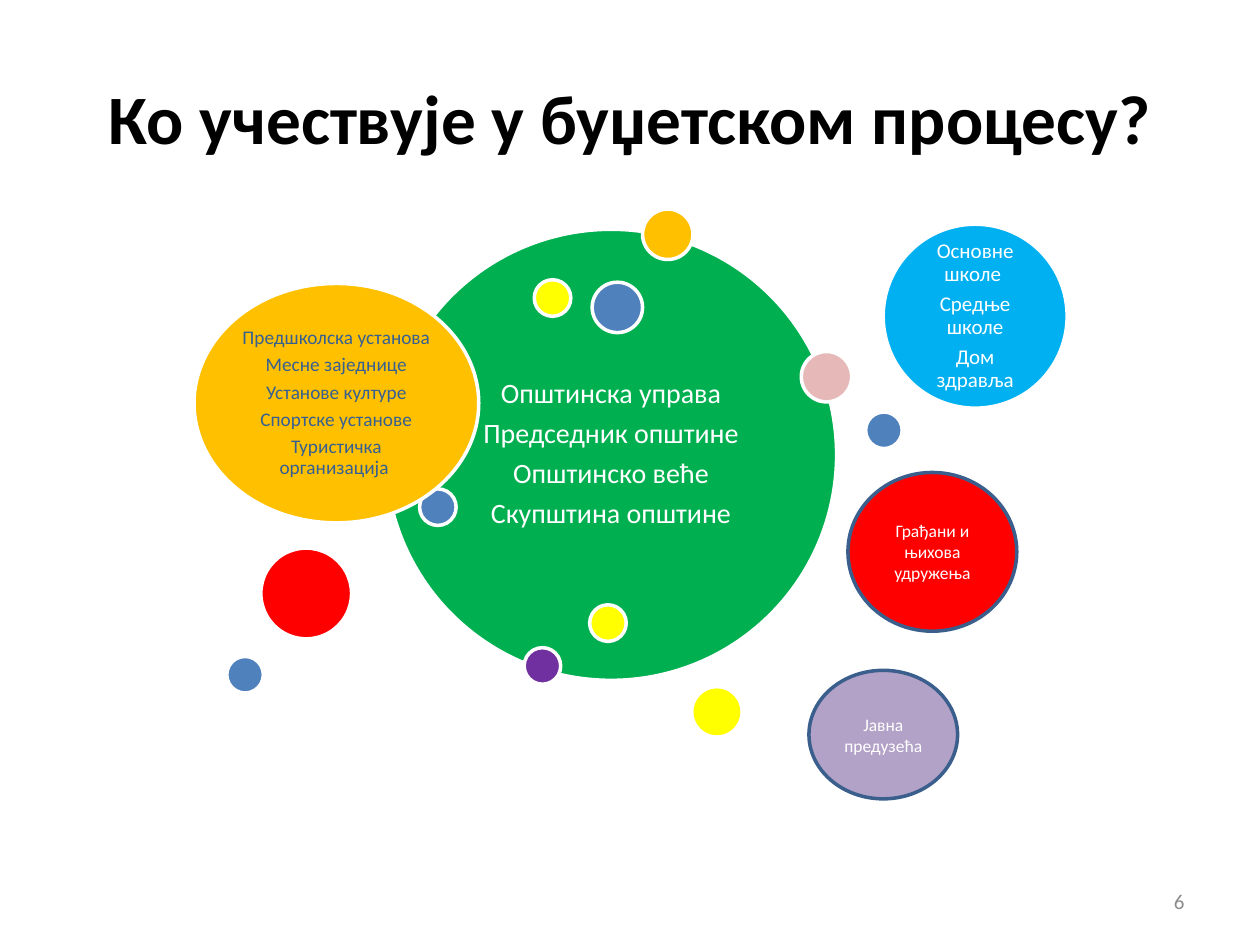
from pptx import Presentation
from pptx.dml.color import RGBColor
from pptx.enum.shapes import MSO_SHAPE
from pptx.enum.text import MSO_ANCHOR, PP_ALIGN
from pptx.util import Inches, Pt

OVAL = MSO_SHAPE.OVAL
MIDDLE = MSO_ANCHOR.MIDDLE
CENTER, RIGHT = PP_ALIGN.CENTER, PP_ALIGN.RIGHT
FONT = "Calibri"
WHITE, NAVY, BLUE = "FFFFFF", "3A5F8C", "4F81BD"
GREEN, GOLD, YELLOW, RED = "00B050", "FFC000", "FFFF00", "FF0000"
SMALL, MID, LARGE = 0.29, 0.4, 0.72

TITLE = "Ко учествује у буџетском процесу?"
NUMBER = "6"

# Groups of participants: box, fill, text size, text colour, inset, lines
CORE = ((3.06, 1.82, 3.58, 3.58), GREEN, 16, WHITE, 0.07,
        ["Општинска управа", "Председник општине",
         "Општинско веће", "Скупштина општине"])
LOCAL = ((1.54, 2.25, 2.26, 1.9), GOLD, 11, "376092", 0.05,
         ["Предшколска установа", "Месне заједнице", "Установе културе",
          "Спортске установе", "Туристичка организација "])
PUBLIC = ((7.01, 1.78, 1.46, 1.46), "00B0F0", 12, WHITE, 0.05,
          ["Основне школе ", "Средње школе", "Дом здравља"])

# Outlined ovals: box, fill, text
OUTER = [
    ((6.73, 3.75, 1.34, 1.26), RED, "Грађани и њихова удружења"),
    ((6.42, 5.32, 1.18, 1.02), "B3A2C7", "Јавна предузећа"),
]

# Plain dots: left, top, size, fill
BACK = [
    (5.1, 1.66, MID, GOLD),
    (4.16, 5.14, SMALL, "7030A0"),
    (6.87, 3.27, SMALL, BLUE),
    (5.49, 5.45, MID, YELLOW),
    (4.24, 2.22, SMALL, YELLOW),
    (3.33, 3.88, SMALL, BLUE),
]
FRONT = [
    (4.7, 2.24, MID, BLUE),
    (2.07, 4.35, LARGE, RED),
    (6.36, 2.79, MID, "E6B9B8"),
    (1.8, 5.21, SMALL, BLUE),
    (4.68, 4.8, SMALL, YELLOW),
]


def rgb(code):
    return RGBColor.from_string(code)


def write(shape, lines, size, color, align=CENTER, bold=False):
    frame = shape.text_frame
    frame.word_wrap = True
    frame.vertical_anchor = MIDDLE
    for i, line in enumerate(lines):
        para = frame.paragraphs[0] if i == 0 else frame.add_paragraph()
        para.alignment = align
        run = para.add_run()
        run.text = line
        font = run.font
        font.name, font.size, font.bold = FONT, Pt(size), bold
        font.color.rgb = rgb(color)
    return frame


def oval(slide, box, fill, line=WHITE):
    shape = slide.shapes.add_shape(OVAL, *map(Inches, box))
    shape.shadow.inherit = False
    shape.fill.solid()
    shape.fill.fore_color.rgb = rgb(fill)
    shape.line.color.rgb = rgb(line)
    shape.line.width = Pt(2)
    return shape


def group(slide, box, fill, size, color, inset, lines):
    frame = write(oval(slide, box, fill), lines, size, color)
    frame.margin_left = frame.margin_right = Inches(inset)
    frame.margin_top = frame.margin_bottom = Inches(inset)
    for para in frame.paragraphs:
        para.line_spacing = 0.9
        para.space_after = Pt(round(size * 0.35, 1))


def dots(slide, items):
    for left, top, size, fill in items:
        oval(slide, (left, top, size, size), fill)


def label(slide, box, text, *style):
    write(slide.shapes.add_textbox(*map(Inches, box)), [text], *style)


def main():
    prs = Presentation()
    prs.slide_width, prs.slide_height = Inches(10), Inches(7.5)
    slide = prs.slides.add_slide(prs.slide_layouts[6])

    # Title and slide number
    label(slide, (0.5, 0.3, 9, 1.25), TITLE, 39.6, "000000", CENTER, True)
    label(slide, (7.17, 6.95, 2.33, 0.4), NUMBER, 12, "8C8C8C", RIGHT)

    # Bubbles, from back to front
    group(slide, *CORE)
    dots(slide, BACK)
    group(slide, *LOCAL)
    dots(slide, FRONT)
    group(slide, *PUBLIC)
    for box, fill, text in OUTER:
        write(oval(slide, box, fill, NAVY), [text], 10, WHITE)

    prs.save("out.pptx")


if __name__ == "__main__":
    main()
